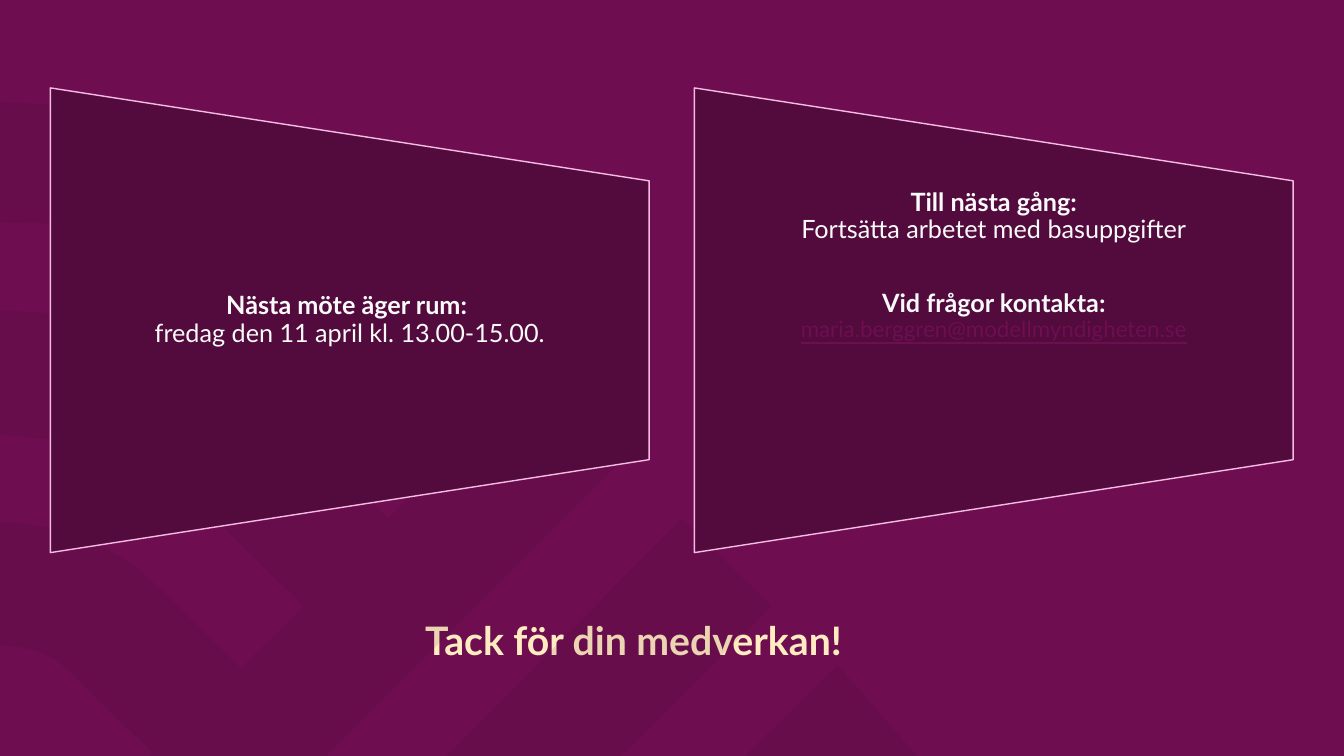
from dataclasses import dataclass

from lxml import etree
from pptx import Presentation
from pptx import util as u
from pptx.dml.color import RGBColor
from pptx.enum import shapes, text
from pptx.oxml.ns import qn


@dataclass(frozen=True)
class Theme:
    font: str = "Lato"
    background: str = "6E0E50"
    pattern: str = "370728"
    pattern_opacity: int = 10
    card: str = "520B3C"
    card_line: str = "F6BBE4"
    body: str = "FAFAFA"
    link: str = "6E0E50"
    title: str = "FFECC1"
    body_size: int = 18
    link_size: int = 16
    title_size: int = 28


THEME = Theme()

# Card layout in centimetres
CARD_LEFT, CARD_STEP, CARD_MIDDLE = 1.27, 16.23, 8.07
CARD_WIDTH, CARD_HEIGHT = 15.09, 11.71
TEXT_HEIGHT = 7.04
INSET = 0.3

# Background pattern in centimetres: two values make a corner,
# six make a Bézier curve (two control points and an end point)
PATTERN = [
    [(21.11, 16.76), (23.11, 19.05), (18.77, 19.05)],
    [(17.2, 13.06), (19.43, 15.27), (15.65, 19.05), (11.25, 19.05)],
    [
        (0, 2.57), (1.47, 2.64), (5.16, 3, 8.74, 4.57, 11.53, 7.39),
        (15.72, 11.56), (8.23, 19.05), (3.76, 19.05), (3.84, 18.97),
        (1.88, 17.04), (1.5, 16.64, 1.02, 16.38, 0.51, 16.31), (0, 16.26),
        (0, 13.16), (0.05, 13.16), (1.52, 13.18, 3, 13.77, 4.11, 14.91),
        (6.07, 16.84), (7.65, 15.27), (5.69, 13.34), (5.61, 13.23),
        (4.45, 12.09, 3, 11.38, 1.5, 11.1), (0, 10.95),
        (0, 7.82), (1.02, 7.87), (3.51, 8.13, 5.92, 9.19, 7.82, 11.1),
        (9.78, 13.06), (11.35, 11.46), (9.4, 9.53),
        (7.21, 7.29, 4.34, 5.94, 1.35, 5.64), (0, 5.61),
    ],
]


def curve_points(start, curve, steps=16):
    """Return points along a cubic Bézier curve."""
    x1, y1, x2, y2, x3, y3 = curve
    points = []
    for step in range(1, steps + 1):
        t = step / steps
        weights = ((1 - t) ** 3, 3 * t * (1 - t) ** 2, 3 * t * t * (1 - t), t ** 3)
        points.append(tuple(
            sum(weight * value for weight, value in zip(weights, values))
            for values in ((start[0], x1, x2, x3), (start[1], y1, y2, y3))
        ))
    return points


def outline(segments):
    """Return an outline as points in EMU."""
    points = []
    for segment in segments:
        points += [segment] if len(segment) == 2 else curve_points(points[-1], segment)
    return [(u.Cm(x), u.Cm(y)) for x, y in points]


def add_pattern(slide):
    contours = [outline(segments) for segments in PATTERN]
    builder = slide.shapes.build_freeform(*contours[0][0], scale=1.0)
    for index, points in enumerate(contours):
        if index:
            builder.move_to(*points[0])
        builder.add_line_segments(points[1:], close=True)
    shape = builder.convert_to_shape()
    shape.shadow.inherit = False
    shape.line.fill.background()
    shape.fill.solid()
    shape.fill.fore_color.rgb = RGBColor.from_string(THEME.pattern)
    color = shape.fill._xPr.find(qn("a:solidFill"))[0]
    alpha = etree.SubElement(color, qn("a:alpha"))
    alpha.set("val", str(THEME.pattern_opacity * 1000))


def add_run(paragraph, words, size, color, bold=False, underline=False):
    run = paragraph.add_run()
    run.text = words
    font = run.font
    font.name, font.size = THEME.font, u.Pt(size)
    font.bold, font.underline = bold, underline
    font.color.rgb = RGBColor.from_string(color)


def add_card_shape(slide, left):
    # The shape is turned a quarter, so its width and height change places
    shape = slide.shapes.add_shape(
        shapes.MSO_SHAPE.FLOWCHART_MANUAL_OPERATION,
        u.Cm(left + (CARD_WIDTH - CARD_HEIGHT) / 2),
        u.Cm(CARD_MIDDLE - CARD_WIDTH / 2),
        u.Cm(CARD_HEIGHT), u.Cm(CARD_WIDTH),
    )
    shape.rotation = 270
    shape.shadow.inherit = False
    shape.fill.solid()
    shape.fill.fore_color.rgb = RGBColor.from_string(THEME.card)
    shape.line.color.rgb = RGBColor.from_string(THEME.card_line)
    shape.line.width = u.Pt(1)


def add_card_text(slide, left, entries, anchor, top_inset):
    box = slide.shapes.add_textbox(
        u.Cm(left), u.Cm(CARD_MIDDLE - TEXT_HEIGHT / 2),
        u.Cm(CARD_WIDTH), u.Cm(TEXT_HEIGHT),
    )
    frame = box.text_frame
    frame.word_wrap = True
    frame.vertical_anchor = anchor
    frame.margin_left = frame.margin_right = u.Cm(INSET)
    frame.margin_top, frame.margin_bottom = u.Cm(top_inset), 0
    for index, (heading, detail, is_link) in enumerate(entries):
        paragraph = frame.add_paragraph() if index else frame.paragraphs[0]
        paragraph.alignment = text.PP_ALIGN.CENTER
        paragraph.line_spacing = 0.9
        paragraph.space_before = u.Pt(33.5 if index else 0)
        add_run(paragraph, heading, THEME.body_size, THEME.body, bold=True)
        paragraph.add_line_break()
        if is_link:
            add_run(paragraph, detail, THEME.link_size, THEME.link, underline=True)
        else:
            add_run(paragraph, detail, THEME.body_size, THEME.body)


def format_title(slide, words):
    title = slide.shapes.title
    title.left, title.top = u.Cm(10.46), u.Cm(15.39)
    title.width, title.height = u.Cm(12.95), u.Cm(1.45)
    frame = title.text_frame
    frame.word_wrap = True
    frame.auto_size = text.MSO_AUTO_SIZE.SHAPE_TO_FIT_TEXT
    frame.vertical_anchor = text.MSO_ANCHOR.TOP
    paragraph = frame.paragraphs[0]
    paragraph.alignment = text.PP_ALIGN.LEFT
    add_run(paragraph, words, THEME.title_size, THEME.title, bold=True)


def main():
    presentation = Presentation()
    presentation.slide_width, presentation.slide_height = u.Cm(33.87), u.Cm(19.05)
    slide = presentation.slides.add_slide(presentation.slide_layouts[5])

    # Background
    slide.background.fill.solid()
    slide.background.fill.fore_color.rgb = RGBColor.from_string(THEME.background)
    add_pattern(slide)

    # Cards: entries, vertical anchor and top inset
    cards = [
        ([("Nästa möte äger rum: ", "fredag den 11 april kl. 13.00-15.00.", False)],
         text.MSO_ANCHOR.MIDDLE, 0),
        ([("Till nästa gång:", "Fortsätta arbetet med basuppgifter", False),
          ("Vid frågor kontakta:", "maria.berggren@modellmyndigheten.se", True)],
         text.MSO_ANCHOR.TOP, 0.22),
    ]
    for index, (entries, anchor, top_inset) in enumerate(cards):
        left = CARD_LEFT + index * CARD_STEP
        add_card_shape(slide, left)
        add_card_text(slide, left, entries, anchor, top_inset)

    # Closing title
    format_title(slide, "Tack för din medverkan!")
    presentation.save("out.pptx")


if __name__ == "__main__":
    main()
